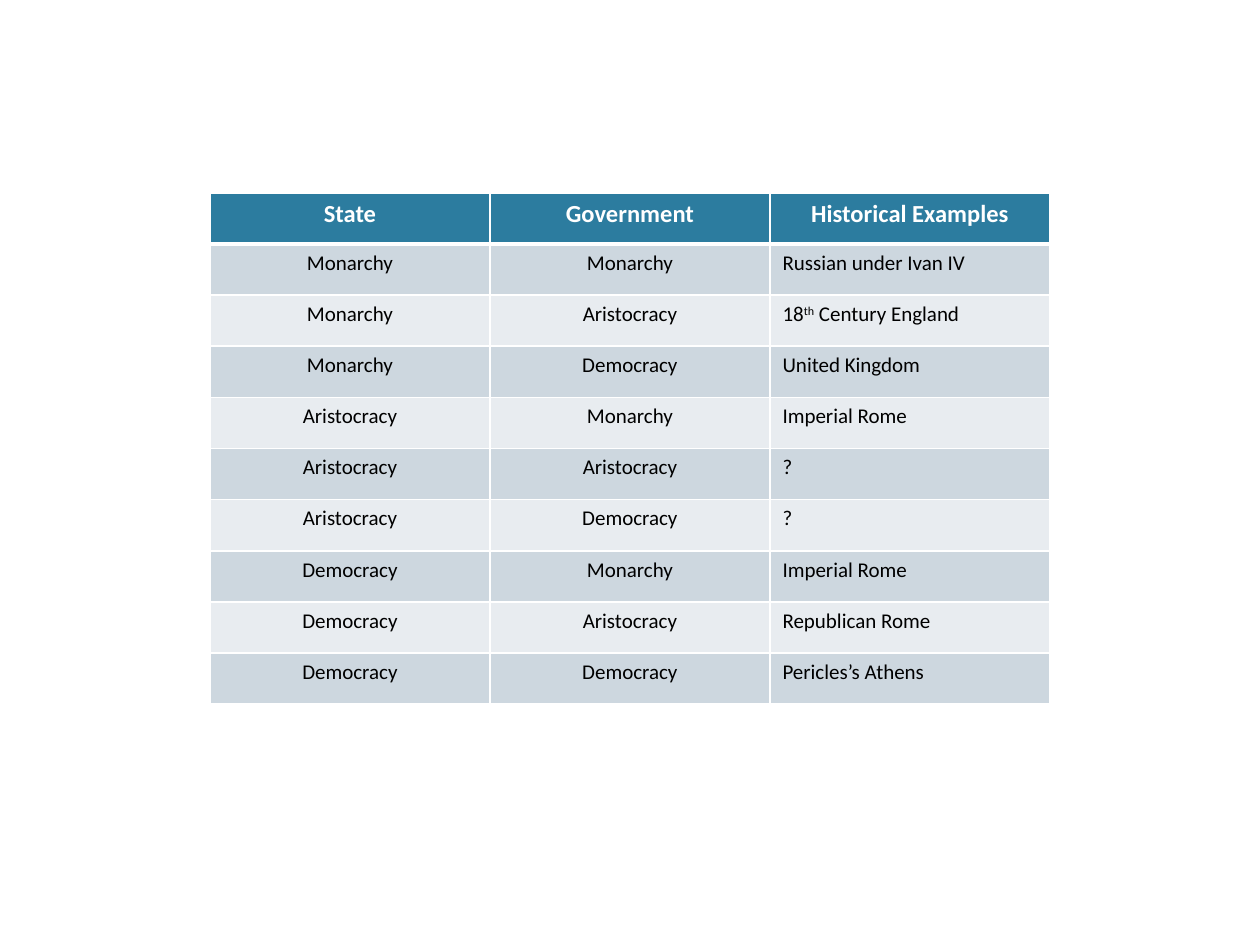
from dataclasses import dataclass
from itertools import product

from lxml.etree import SubElement
from pptx import Presentation
from pptx.dml.color import RGBColor
from pptx.enum.text import PP_ALIGN
from pptx.oxml.ns import qn
from pptx.util import Inches, Pt


@dataclass(frozen=True)
class Theme:
    font: str = "Calibri"
    header_fill: str = "2C7C9F"
    bands: tuple[str, str] = ("CDD7DF", "E8ECF0")
    header_text: str = "FFFFFF"
    body_text: str = "000000"
    border: str = "FFFFFF"
    header_size: float = 14
    body_size: float = 12
    thin: float = 1
    thick: float = 3


@dataclass(frozen=True)
class CellStyle:
    fill: str
    color: str
    size: float
    bold: bool
    align: PP_ALIGN
    top: float
    bottom: float


THEME = Theme()
HEADERS = ("State", "Government", "Historical Examples")
FORMS = ("Monarchy", "Aristocracy", "Democracy")
# A caret pair marks superscript text.
EXAMPLES = (
    "Russian under Ivan IV", "18^th^ Century England", "United Kingdom",
    "Imperial Rome", "?", "?",
    "Imperial Rome", "Republican Rome", "Pericles’s Athens",
)
ROWS = [HEADERS] + [
    (*pair, example) for pair, example in zip(product(FORMS, repeat=2), EXAMPLES)
]


def style_for(row: int, col: int) -> CellStyle:
    t = THEME
    if row == 0:
        return CellStyle(t.header_fill, t.header_text, t.header_size, True,
                         PP_ALIGN.CENTER, t.thin, t.thick)
    align = PP_ALIGN.LEFT if col == len(HEADERS) - 1 else PP_ALIGN.CENTER
    return CellStyle(t.bands[(row - 1) % 2], t.body_text, t.body_size, False,
                     align, t.thick if row == 1 else t.thin, t.thin)


def set_borders(cell, style: CellStyle) -> None:
    """Outline the cell; the schema wants the lines ahead of the fill."""
    tc_pr = cell._tc.get_or_add_tcPr()
    widths = {"lnL": THEME.thin, "lnR": THEME.thin,
              "lnT": style.top, "lnB": style.bottom}
    for i, (side, width) in enumerate(widths.items()):
        ln = SubElement(tc_pr, qn(f"a:{side}"), w=str(Pt(width)))
        fill = SubElement(ln, qn("a:solidFill"))
        SubElement(fill, qn("a:srgbClr"), val=THEME.border)
        tc_pr.insert(i, ln)


def fill_cell(cell, text: str, style: CellStyle) -> None:
    cell.fill.solid()
    cell.fill.fore_color.rgb = RGBColor.from_string(style.fill)
    set_borders(cell, style)
    p = cell.text_frame.paragraphs[0]
    p.alignment = style.align
    font_format = {"name": THEME.font, "size": Pt(style.size), "bold": style.bold}
    for i, part in enumerate(text.split("^")):
        r = p.add_run()
        r.text = part
        for name, value in font_format.items():
            setattr(r.font, name, value)
        r.font.color.rgb = RGBColor.from_string(style.color)
        if i % 2:
            r.font._element.set("baseline", "30000")


def main() -> None:
    prs = Presentation()
    prs.slide_width, prs.slide_height = Inches(10), Inches(7.5)
    s = prs.slides.add_slide(prs.slide_layouts[6])

    width, height = prs.slide_width * 2 // 3, Inches(4.06)
    table = s.shapes.add_table(
        len(ROWS), len(HEADERS),
        (prs.slide_width - width) // 2, Inches(1.53), width, height,
    ).table
    for row, texts in enumerate(ROWS):
        for col, text in enumerate(texts):
            fill_cell(table.cell(row, col), text, style_for(row, col))
    prs.save("out.pptx")


if __name__ == "__main__":
    main()
